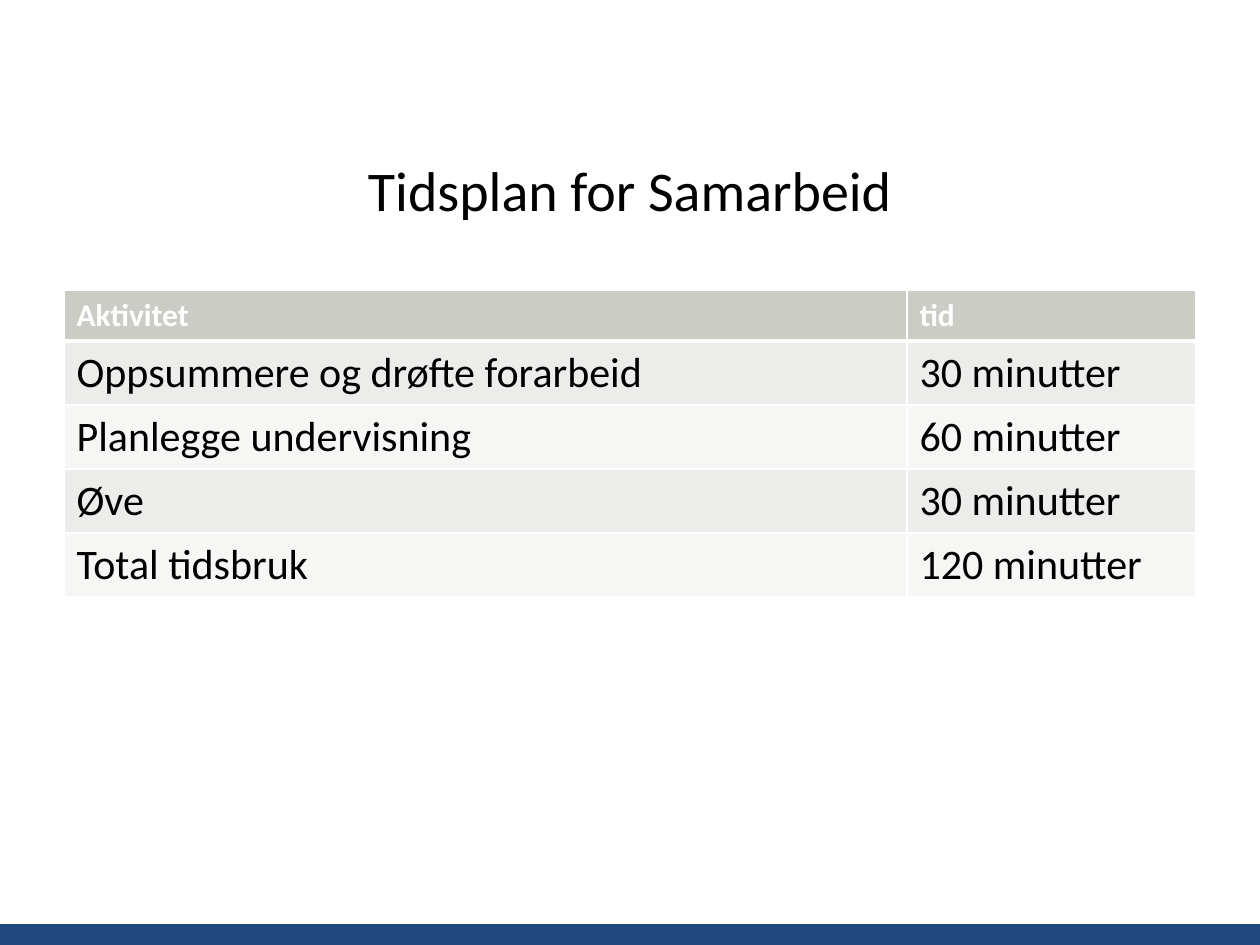
from dataclasses import dataclass

from lxml import etree
from pptx import Presentation
from pptx import util as u
from pptx.dml.color import RGBColor
from pptx.enum import shapes, text
from pptx.oxml import ns

TITLE = "Tidsplan for Samarbeid"
ROWS = [
    ("Aktivitet", "tid"),
    ("Oppsummere og drøfte forarbeid", "30 minutter"),
    ("Planlegge undervisning", "60 minutter"),
    ("Øve", "30 minutter"),
    ("Total tidsbruk", "120 minutter"),
]

PAGE_WIDTH, PAGE_HEIGHT = 1260, 945
FOOTER_HEIGHT = 21
TITLE_BOX = (63, 126, 1134, 127)
TABLE_LEFT, TABLE_TOP = 64, 290
COLUMN_WIDTHS = (843, 289)
HEADER_HEIGHT, ROW_HEIGHT = 50, 64


@dataclass(frozen=True)
class Theme:
    font: str = "Calibri"
    title_size: int = 32
    header_size: int = 18
    body_size: int = 24
    dark: str = "000000"
    light: str = "FFFFFF"
    footer: str = "1F487E"
    header: str = "CBCCC6"
    bands: tuple = ("ECECEA", "F6F6F5")
    thin: int = 1
    thick: int = 3


THEME = Theme()


def px(length):
    return u.Emu(round(length * 914400 / 126))


def style(para, size, color, bold=False):
    para.font.name = THEME.font
    para.font.size = u.Pt(size)
    para.font.bold = bold
    para.font.color.rgb = RGBColor.from_string(color)


def paint(shape, color):
    shape.fill.solid()
    shape.fill.fore_color.rgb = RGBColor.from_string(color)


def add_borders(cell, top, bottom):
    properties = cell._tc.get_or_add_tcPr()
    widths = {"lnL": THEME.thin, "lnR": THEME.thin, "lnT": top, "lnB": bottom}
    for position, (side, width) in enumerate(widths.items()):
        line = etree.Element(ns.qn(f"a:{side}"), w=str(u.Pt(width)))
        fill = etree.SubElement(line, ns.qn("a:solidFill"))
        etree.SubElement(fill, ns.qn("a:srgbClr"), val=THEME.light)
        properties.insert(position, line)


def add_footer(page):
    bar = page.shapes.add_shape(
        shapes.MSO_SHAPE.RECTANGLE, 0, px(PAGE_HEIGHT - FOOTER_HEIGHT),
        px(PAGE_WIDTH), px(FOOTER_HEIGHT))
    bar.shadow.inherit = False
    paint(bar, THEME.footer)
    bar.line.fill.background()


def add_title(page):
    title = page.shapes.title
    title.left, title.top, title.width, title.height = map(px, TITLE_BOX)
    title.text_frame.text = TITLE
    title.text_frame.vertical_anchor = text.MSO_ANCHOR.MIDDLE
    para = title.text_frame.paragraphs[0]
    para.alignment = text.PP_ALIGN.CENTER
    style(para, THEME.title_size, THEME.dark)


def add_schedule(page):
    heights = [HEADER_HEIGHT] + [ROW_HEIGHT] * (len(ROWS) - 1)
    table = page.shapes.add_table(
        len(ROWS), len(COLUMN_WIDTHS), px(TABLE_LEFT), px(TABLE_TOP),
        px(sum(COLUMN_WIDTHS)), px(sum(heights))).table
    for column, width in zip(table.columns, COLUMN_WIDTHS):
        column.width = px(width)
    for index, (row, height, values) in enumerate(zip(table.rows, heights, ROWS)):
        row.height = px(height)
        header = index == 0
        for cell, value in zip(row.cells, values):
            cell.text = value
            para = cell.text_frame.paragraphs[0]
            if header:
                paint(cell, THEME.header)
                style(para, THEME.header_size, THEME.light, bold=True)
            else:
                paint(cell, THEME.bands[(index - 1) % 2])
                style(para, THEME.body_size, THEME.dark)
            add_borders(cell, THEME.thick if index == 1 else THEME.thin,
                        THEME.thick if header else THEME.thin)


def main():
    deck = Presentation()
    deck.slide_width, deck.slide_height = px(PAGE_WIDTH), px(PAGE_HEIGHT)
    page = deck.slides.add_slide(deck.slide_layouts[5])
    add_footer(page)
    add_title(page)
    add_schedule(page)
    deck.save("out.pptx")


if __name__ == "__main__":
    main()
